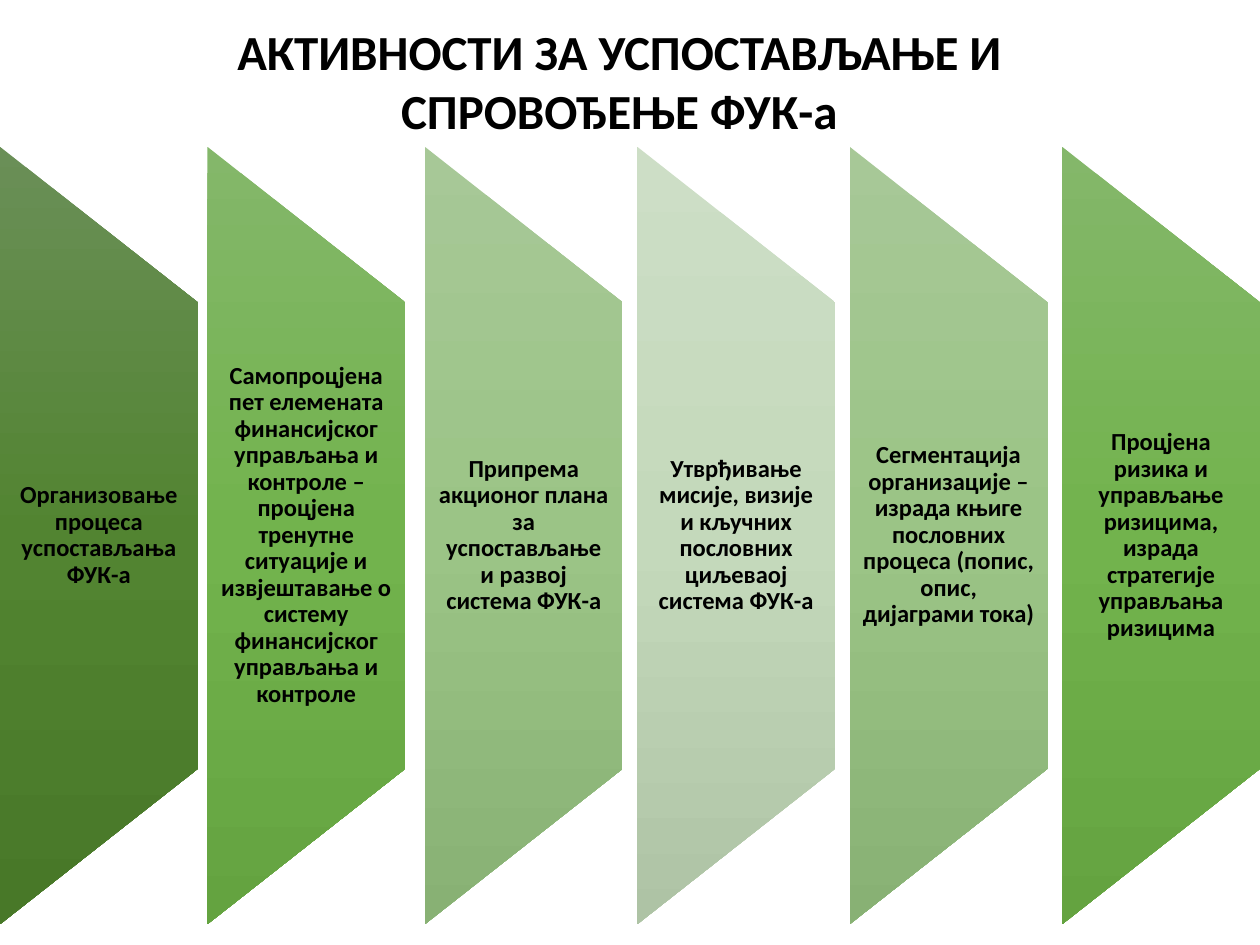
from dataclasses import dataclass

from lxml import etree
from pptx import Presentation
from pptx.dml.color import RGBColor
from pptx.enum.shapes import MSO_SHAPE
from pptx.enum.text import MSO_ANCHOR, MSO_AUTO_SIZE, PP_ALIGN
from pptx.oxml.ns import qn
from pptx.util import Inches, Pt

BANNER = MSO_SHAPE.FLOWCHART_MANUAL_OPERATION
TOP, MIDDLE = MSO_ANCHOR.TOP, MSO_ANCHOR.MIDDLE
GROW, FIXED = MSO_AUTO_SIZE.SHAPE_TO_FIT_TEXT, MSO_AUTO_SIZE.NONE
CENTER = PP_ALIGN.CENTER

WIDTH, HEIGHT = 10, 7.5
TITLE_ONLY = 5
FONT = "Calibri"
COLORS = {"text": "000000"}
GRADIENTS = {
    "dark": ("6A8F57", "528431", "487828"),
    "strong": ("84B76A", "72B34D", "64A340"),
    "soft": ("A7C897", "9BC486", "88B174"),
    "pale": ("CDDEC6", "C4D9BB", "AEC3A5"),
}

BANNER_WIDTH, BANNER_HEIGHT = 1.57, 6.17
BANNER_MIDDLE = 4.25
LABEL_HEIGHT = BANNER_HEIGHT * 0.6


@dataclass
class Step:
    text: str
    gradient: str
    shift: float = 0


STEPS = [
    Step("Организовање процеса успостављања ФУК-а", "dark"),
    Step("Самопроцјена пет елемената финансијског управљања и контроле – "
         "процјена тренутне ситуације и извјештавање о систему "
         "финансијског управљања и контроле", "strong", shift=-0.04),
    Step("Припрема акционог плана за успостављање и развој система ФУК-а", "soft"),
    Step("Утврђивање мисије, визије и кључних пословних циљеваој "
         "система ФУК-а", "pale"),
    Step("Сегментација организације – израда књиге пословних процеса "
         "(попис, опис, дијаграми тока)", "soft"),
    Step("Процјена ризика и управљање ризицима, израда стратегије "
         "управљања ризицима", "strong"),
]
PITCH = (WIDTH - BANNER_WIDTH) / (len(STEPS) - 1)


def write_text(box, text: str, *, size: float, anchor, auto_size,
               margin_y: float = 0.05, line_spacing: float = 1.0,
               space_after: float = 0) -> None:
    frame = box.text_frame
    frame.word_wrap = True
    frame.auto_size = auto_size
    frame.vertical_anchor = anchor
    frame.margin_left = frame.margin_right = Inches(0.1)
    frame.margin_top = frame.margin_bottom = Inches(margin_y)
    para = frame.paragraphs[0]
    para.alignment = CENTER
    para.line_spacing = line_spacing
    para.space_after = Pt(space_after)
    span = para.add_run()
    span.text = text
    span.font.name = FONT
    span.font.size = Pt(size)
    span.font.bold = True
    span.font.color.rgb = RGBColor.from_string(COLORS["text"])


def fill_downward(shape, colors: tuple[str, str, str]) -> None:
    """Fill with a three-stop gradient that stays vertical on a turned shape."""
    shape.fill.gradient()
    gradient = shape._element.spPr.find(qn("a:gradFill"))
    gradient.set("rotWithShape", "0")
    for child in list(gradient):
        gradient.remove(child)
    stops = etree.SubElement(gradient, qn("a:gsLst"))
    for position, color in zip((0, 50000, 100000), colors):
        stop = etree.SubElement(stops, qn("a:gs"), pos=str(position))
        etree.SubElement(stop, qn("a:srgbClr"), val=color)
    etree.SubElement(gradient, qn("a:lin"), ang="5400000", scaled="0")


def draw_title(page, text: str) -> None:
    title = page.shapes.title
    title.left, title.top = Inches(0.83), Inches(0.12)
    title.width, title.height = Inches(8.17), Inches(1.04)
    write_text(title, text, size=28, anchor=TOP, auto_size=GROW)


def draw_step(page, step: Step, column: int) -> None:
    left = column * PITCH + step.shift
    center = left + BANNER_WIDTH / 2
    banner = page.shapes.add_shape(
        BANNER,
        Inches(center - BANNER_HEIGHT / 2), Inches(BANNER_MIDDLE - BANNER_WIDTH / 2),
        Inches(BANNER_HEIGHT), Inches(BANNER_WIDTH))
    banner.rotation = 270
    banner.shadow.inherit = False
    banner.line.fill.background()
    fill_downward(banner, GRADIENTS[step.gradient])

    label = page.shapes.add_textbox(
        Inches(left), Inches(BANNER_MIDDLE - LABEL_HEIGHT / 2),
        Inches(BANNER_WIDTH), Inches(LABEL_HEIGHT))
    write_text(label, step.text, size=14, anchor=MIDDLE, auto_size=FIXED,
               margin_y=0, line_spacing=0.9, space_after=4.9)


def main() -> None:
    deck = Presentation()
    deck.slide_width, deck.slide_height = Inches(WIDTH), Inches(HEIGHT)
    page = deck.slides.add_slide(deck.slide_layouts[TITLE_ONLY])
    draw_title(page, "АКТИВНОСТИ ЗА УСПОСТАВЉАЊЕ И СПРОВОЂЕЊЕ ФУК-а")
    for column, step in enumerate(STEPS):
        draw_step(page, step, column)
    deck.save("out.pptx")


if __name__ == "__main__":
    main()
